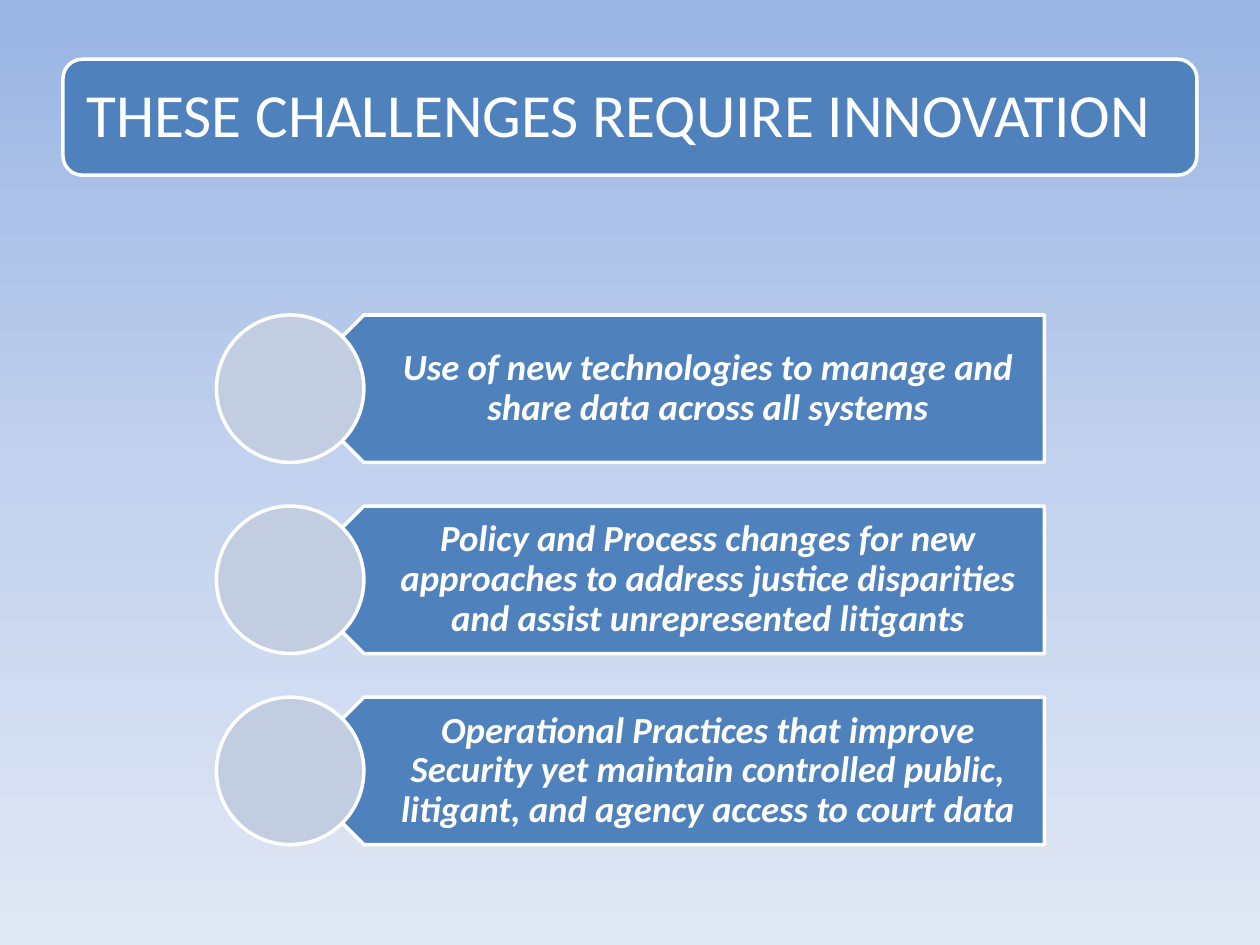
from copy import deepcopy
from pptx import Presentation, util as u
from pptx.dml.color import RGBColor
from pptx.enum import shapes, text

TITLE = "THESE CHALLENGES REQUIRE INNOVATION"
INNOVATIONS = [
    "Use of new technologies to manage and share data across all systems",
    "Policy and Process changes for new approaches to address justice "
    "disparities and assist unrepresented litigants",
    "Operational Practices that improve Security yet maintain controlled "
    "public, litigant, and agency access to court data",
]
THEME = dict(
    font="Calibri", title_size=35, body_size=21,
    blue="4F81BD", circle="C2CDE1", white="FFFFFF", line=2,
    sky=[(0, "9AB5E4"), (0.5, "C2D1ED"), (1, "E1E8F5")],
)

# Layout in points
TITLE_BOX = (36, 33.84, 648, 66.24)
TITLE_INSET = 2.95
ROW_TOP, ROW_STEP, ROW_H = 180, 109.2, 84.24
CIRCLE_X, PLATE_X, PLATE_W = 123.7, 165.8, 431.0


def rgb(name):
    return RGBColor.from_string(THEME.get(name, name))


def paint_background(s, stops):
    fill = s.background.fill
    fill.gradient()
    fill.gradient_angle = 270
    first = s.element.xpath(".//p:bg//a:gs")[0]
    first.addnext(deepcopy(first))
    for stop, (position, color) in zip(fill.gradient_stops, stops):
        stop.position = position
        stop.color.rgb = rgb(color)


def add_shape(s, kind, box, fill, rotation=0):
    sp = s.shapes.add_shape(kind, *map(u.Pt, box))
    sp.shadow.inherit = False
    sp.rotation = rotation
    sp.fill.solid()
    sp.fill.fore_color.rgb = rgb(fill)
    sp.line.color.rgb = rgb("white")
    sp.line.width = u.Pt(THEME["line"])
    return sp


def add_text(s, words, box, insets, size, align="LEFT", bold=False, italic=False):
    tf = s.shapes.add_textbox(*map(u.Pt, box)).text_frame
    tf.word_wrap = True
    tf.vertical_anchor = text.MSO_ANCHOR.MIDDLE
    tf.margin_left, tf.margin_top, tf.margin_right, tf.margin_bottom = map(u.Pt, insets)
    p = tf.paragraphs[0]
    p.alignment = text.PP_ALIGN[align]
    p.line_spacing = 0.9
    r = p.add_run()
    r.text = words
    r.font.name, r.font.size = THEME["font"], u.Pt(THEME[size])
    r.font.bold, r.font.italic = bold, italic
    r.font.color.rgb = rgb("white")


def main():
    prs = Presentation()
    prs.slide_width, prs.slide_height = u.Pt(720), u.Pt(540)
    s = prs.slides.add_slide(prs.slide_layouts[6])
    paint_background(s, THEME["sky"])
    kind = shapes.MSO_SHAPE

    # Title banner
    add_shape(s, kind.ROUNDED_RECTANGLE, TITLE_BOX, "blue")
    x, y, w, h = TITLE_BOX
    d = TITLE_INSET
    add_text(s, TITLE, (x + d, y + d, w - 2 * d, h - 2 * d), [10.5] * 4, "title_size")

    # Innovation rows: arrow plate, its text, then the circle over the tip
    for i, words in enumerate(INNOVATIONS):
        y = ROW_TOP + i * ROW_STEP
        add_shape(s, kind.PENTAGON, (PLATE_X, y, PLATE_W, ROW_H), "blue", rotation=180)
        text_x = PLATE_X + ROW_H / 4
        add_text(s, words, (text_x, y, PLATE_X + PLATE_W - text_x, ROW_H),
                 (37, 6.5, 11.5, 6.5), "body_size", align="CENTER", bold=True, italic=True)
        add_shape(s, kind.OVAL, (CIRCLE_X, y, ROW_H, ROW_H), "circle")

    prs.save("out.pptx")


if __name__ == "__main__":
    main()
